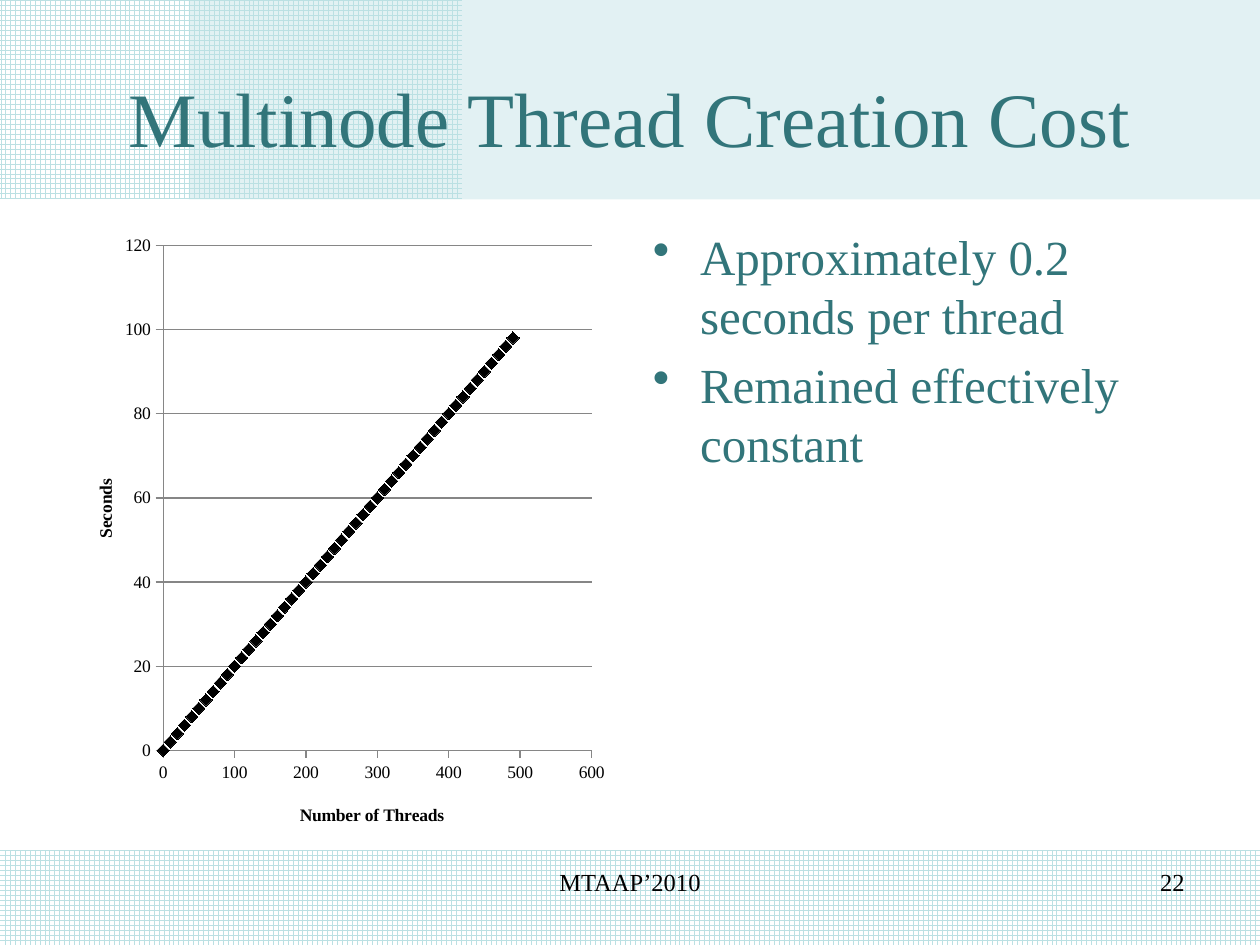
"""Build the slide on multinode thread creation cost."""
from dataclasses import dataclass

from lxml import etree
from pptx import Presentation, util as u
from pptx.chart.data import XyChartData
from pptx.dml.color import RGBColor
from pptx.enum import chart as ch, dml, shapes, text
from pptx.oxml.ns import qn

PX = 7620
FONT = "Times New Roman"
PALE = RGBColor(0xBB, 0xE0, 0xE3)
TEAL = RGBColor(0x32, 0x75, 0x7A)
GREY = RGBColor(0x86, 0x86, 0x86)
BLACK = RGBColor(0, 0, 0)
WHITE = RGBColor(0xFF, 0xFF, 0xFF)


@dataclass(frozen=True)
class Box:
    left: int
    top: int
    width: int
    height: int

    def emu(self) -> tuple:
        return tuple(n * PX for n in (self.left, self.top, self.width, self.height))


@dataclass(frozen=True)
class Band:
    box: Box
    opacity: int = 0


BANDS = [
    Band(Box(0, 810, 1200, 90)),
    Band(Box(0, 0, 440, 190)),
    Band(Box(180, 0, 1020, 190), opacity=42),
]


def add_band(slide, band: Band) -> None:
    """Draw a gridded band, or a translucent one when it has an opacity."""
    panel = slide.shapes.add_shape(shapes.MSO_SHAPE.FLOWCHART_PROCESS, *band.box.emu())
    panel.shadow.inherit = False
    panel.line.fill.background()
    if band.opacity:
        panel.fill.solid()
        panel.fill.fore_color.rgb = PALE
        tint = panel.fill._xPr.find(".//" + qn("a:srgbClr"))
        etree.SubElement(tint, qn("a:alpha"), val=str(band.opacity * 1000))
    else:
        panel.fill.patterned()
        panel.fill.pattern = dml.MSO_PATTERN.LARGE_GRID
        panel.fill.fore_color.rgb = PALE
        panel.fill.back_color.rgb = WHITE


def add_text(slide, box: Box, *lines: str, size: int, color=BLACK,
             align=text.PP_ALIGN.LEFT, anchor=text.MSO_ANCHOR.TOP, bullet="") -> None:
    """Write lines as paragraphs, with hanging bullets if a bullet is given."""
    frame = slide.shapes.add_textbox(*box.emu()).text_frame
    frame.word_wrap = True
    frame.vertical_anchor = anchor
    for index, line in enumerate(lines):
        paragraph = frame.paragraphs[0] if index == 0 else frame.add_paragraph()
        paragraph.text = line
        paragraph.alignment = align
        if index:
            paragraph.space_before = u.Pt(size * 0.2)
        if bullet:
            props = paragraph._p.get_or_add_pPr()
            props.set("marL", str(45 * PX))
            props.set("indent", str(-45 * PX))
            etree.SubElement(props, qn("a:buChar"), char=bullet)
        font = paragraph.font
        font.name, font.size = FONT, u.Pt(size)
        font.color.rgb = color


def place(part, index: int, **fractions: float) -> None:
    """Give a chart part a manual layout in fractions of the chart."""
    for old in part.findall(qn("c:layout")):
        part.remove(old)
    layout = etree.Element(qn("c:layout"))
    manual = etree.SubElement(layout, qn("c:manualLayout"))
    if "w" in fractions:
        etree.SubElement(manual, qn("c:layoutTarget"), val="inner")
    for mode in ("xMode", "yMode"):
        etree.SubElement(manual, qn(f"c:{mode}"), val="edge")
    for key, value in fractions.items():
        etree.SubElement(manual, qn(f"c:{key}"), val=str(value))
    part.insert(index, layout)


def style_axis(axis, title: str, top: int, step: int, x: float, y: float) -> None:
    """Set the scale, lines and placed title of an axis."""
    axis.minimum_scale, axis.maximum_scale, axis.major_unit = 0, top, step
    axis.major_tick_mark = ch.XL_TICK_MARK.OUTSIDE
    axis.minor_tick_mark = ch.XL_TICK_MARK.NONE
    axis.format.line.color.rgb = GREY
    axis.tick_labels.font.size = u.Pt(10)
    frame = axis.axis_title.text_frame
    frame.text = title
    font = frame.paragraphs[0].runs[0].font
    font.name, font.size, font.bold = FONT, u.Pt(10), True
    font.color.rgb = BLACK
    place(axis.axis_title._element, 1, x=x, y=y)


def add_cost_chart(slide, box: Box) -> None:
    """Plot seconds against threads at a fifth of a second per thread."""
    data = XyChartData()
    costs = data.add_series("Series 1")
    for threads in range(0, 500, 10):
        costs.add_data_point(threads, threads // 5)
    chart = slide.shapes.add_chart(
        ch.XL_CHART_TYPE.XY_SCATTER, *box.emu(), data).chart
    chart.has_legend = chart.has_title = False
    chart.font.name, chart.font.size = FONT, u.Pt(10)
    chart.font.color.rgb = BLACK
    plot = chart.plots[0]
    plot.vary_by_categories = False

    series = plot.series[0]
    series.smooth = False
    series.format.line.fill.background()
    marker = series.marker
    marker.style, marker.size = ch.XL_MARKER_STYLE.DIAMOND, 7
    marker.format.fill.solid()
    marker.format.fill.fore_color.rgb = BLACK
    marker.format.line.fill.background()

    threads_axis, seconds_axis = chart.category_axis, chart.value_axis
    style_axis(threads_axis, "Number of Threads", 600, 100, x=0.42, y=0.93)
    style_axis(seconds_axis, "Seconds", 120, 20, x=0.05, y=0.41)
    threads_axis.has_major_gridlines = False
    seconds_axis.has_major_gridlines = True
    seconds_axis.major_gridlines.format.line.color.rgb = GREY
    turned = seconds_axis.axis_title._element.find(".//" + qn("a:bodyPr"))
    turned.set("rot", "-5400000")
    turned.set("vert", "horz")
    place(chart._chartSpace.find(".//" + qn("c:plotArea")), 0,
          x=0.18, y=0.04, w=0.77, h=0.81)


def main() -> None:
    """Build and save the slide."""
    deck = Presentation()
    deck.slide_width, deck.slide_height = 1200 * PX, 900 * PX
    slide = deck.slides.add_slide(deck.slide_layouts[6])
    for band in BANDS:
        add_band(slide, band)
    add_text(slide, Box(60, 36, 1080, 150), "Multinode Thread Creation Cost",
             size=44, color=TEAL, align=text.PP_ALIGN.CENTER,
             anchor=text.MSO_ANCHOR.MIDDLE)
    add_text(slide, Box(610, 210, 530, 594), "Approximately 0.2 seconds per thread",
             "Remained effectively constant", size=28, color=TEAL, bullet="•")
    add_text(slide, Box(410, 820, 380, 62), "MTAAP’2010", size=14,
             align=text.PP_ALIGN.CENTER)
    add_text(slide, Box(860, 820, 280, 62), "22", size=14, align=text.PP_ALIGN.RIGHT)
    add_cost_chart(slide, Box(60, 210, 530, 594))
    deck.save("out.pptx")


if __name__ == "__main__":
    main()
